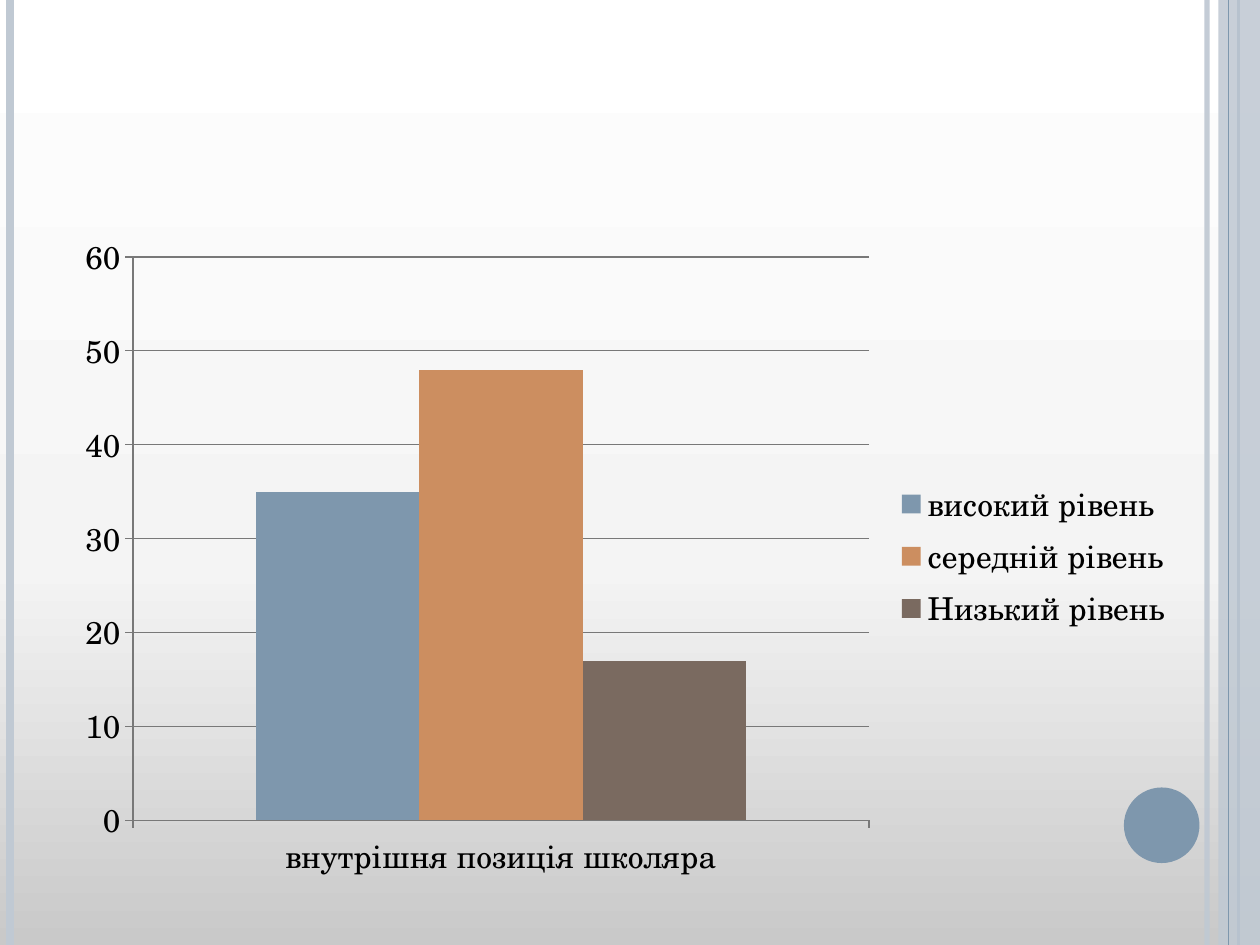
from copy import deepcopy

from lxml.etree import SubElement
from pptx import Presentation
from pptx.chart.data import CategoryChartData
from pptx.dml.color import RGBColor
from pptx.enum.chart import XL_CHART_TYPE, XL_LEGEND_POSITION, XL_TICK_MARK
from pptx.enum.shapes import MSO_CONNECTOR, MSO_SHAPE
from pptx.oxml.ns import qn
from pptx.util import Inches, Pt

WIDTH, HEIGHT = 10, 7.5
FONT = "TeX Gyre Schola"
COLORS = {
    "blue": "7E97AD",
    "orange": "CC8E60",
    "brown": "7A6A60",
    "pale": "C0C9D3",
    "axis": "787878",
    "text": "000000",
}
BACKGROUND_STOPS = [(0, "C9C9C9"), (0.4, "F4F4F4"), (1, "FFFFFF")]
CATEGORY = "внутрішня позиція школяра"
LEVELS = [
    ("високий рівень", 35, "blue"),
    ("середній рівень", 48, "orange"),
    ("Низький рівень", 17, "brown"),
]


def rgb(name):
    return RGBColor.from_string(COLORS[name])


def set_alpha(color_format_parent, percent):
    color = color_format_parent.find(".//" + qn("a:srgbClr"))
    SubElement(color, qn("a:alpha")).set("val", str(percent * 1000))


def paint_background(slide):
    fill = slide.background.fill
    fill.gradient()
    fill.gradient_angle = 90
    first_stop = slide.background.fill.gradient_stops[0]
    stop_list = slide.element.find(".//" + qn("a:gsLst"))
    stop_list.append(deepcopy(stop_list[0]))
    for stop, (position, color) in zip(fill.gradient_stops, BACKGROUND_STOPS):
        stop.position = position
        stop.color.rgb = RGBColor.from_string(color)
    # Plain colours, without the default tints
    for color in stop_list.iter(qn("a:srgbClr")):
        for tint in list(color):
            color.remove(tint)


def add_stripe(slide, x, color, width, opacity=100):
    stripe = slide.shapes.add_connector(
        MSO_CONNECTOR.STRAIGHT, Inches(x), 0, Inches(x), Inches(HEIGHT))
    stripe.line.color.rgb = rgb(color)
    stripe.line.width = Pt(width)
    properties = stripe.element.spPr
    if opacity < 100:
        set_alpha(properties, opacity)
    SubElement(properties, qn("a:effectLst"))


def add_solid(slide, preset, left, top, width, height, color, opacity=100):
    solid = slide.shapes.add_shape(
        preset, Inches(left), Inches(top), Inches(width), Inches(height))
    solid.shadow.inherit = False
    solid.fill.solid()
    solid.fill.fore_color.rgb = rgb(color)
    solid.line.fill.background()
    if opacity < 100:
        set_alpha(solid.element.spPr, opacity)


def style_axis(axis):
    axis.major_tick_mark = XL_TICK_MARK.OUTSIDE
    axis.minor_tick_mark = XL_TICK_MARK.NONE
    axis.format.line.color.rgb = rgb("axis")
    axis.format.line.width = Pt(0.75)


def add_level_chart(slide):
    data = CategoryChartData()
    data.categories = [CATEGORY]
    for level, share, _ in LEVELS:
        data.add_series(level, [share])
    chart = slide.shapes.add_chart(
        XL_CHART_TYPE.COLUMN_CLUSTERED, Inches(0.5), Inches(1.75),
        Inches(8.91), Inches(5.33), data).chart

    chart.has_title = False
    chart.font.name = FONT
    chart.font.size = Pt(18)
    chart.font.color.rgb = rgb("text")
    chart.has_legend = True
    chart.legend.position = XL_LEGEND_POSITION.RIGHT
    chart.legend.include_in_layout = False

    # Axes and gridlines
    style_axis(chart.category_axis)
    style_axis(chart.value_axis)
    chart.value_axis.minimum_scale = 0
    chart.value_axis.maximum_scale = 60
    chart.value_axis.major_unit = 10
    gridlines = chart.value_axis.major_gridlines.format.line
    gridlines.color.rgb = rgb("axis")
    gridlines.width = Pt(0.75)

    # Columns
    plot = chart.plots[0]
    plot.gap_width = 150
    plot.overlap = 0
    plot.vary_by_categories = False
    for column, (_, _, color) in zip(plot.series, LEVELS):
        column.format.fill.solid()
        column.format.fill.fore_color.rgb = rgb(color)


def main():
    deck = Presentation()
    deck.slide_width, deck.slide_height = Inches(WIDTH), Inches(HEIGHT)
    slide = deck.slides.add_slide(deck.slide_layouts[6])
    paint_background(slide)

    # Side decoration
    add_stripe(slide, 9.58, "pale", 3, 93)
    add_stripe(slide, 0.08, "pale", 4.5)
    add_stripe(slide, 9.83, "blue", 1.5)
    add_solid(slide, MSO_SHAPE.RECTANGLE, 9.67, 0, 0.33, HEIGHT, "pale", 87)
    add_stripe(slide, 9.75, "blue", 0.75)
    add_solid(slide, MSO_SHAPE.OVAL, 8.92, 6.25, 0.6, 0.6, "blue")

    add_level_chart(slide)
    deck.save("out.pptx")


if __name__ == "__main__":
    main()
